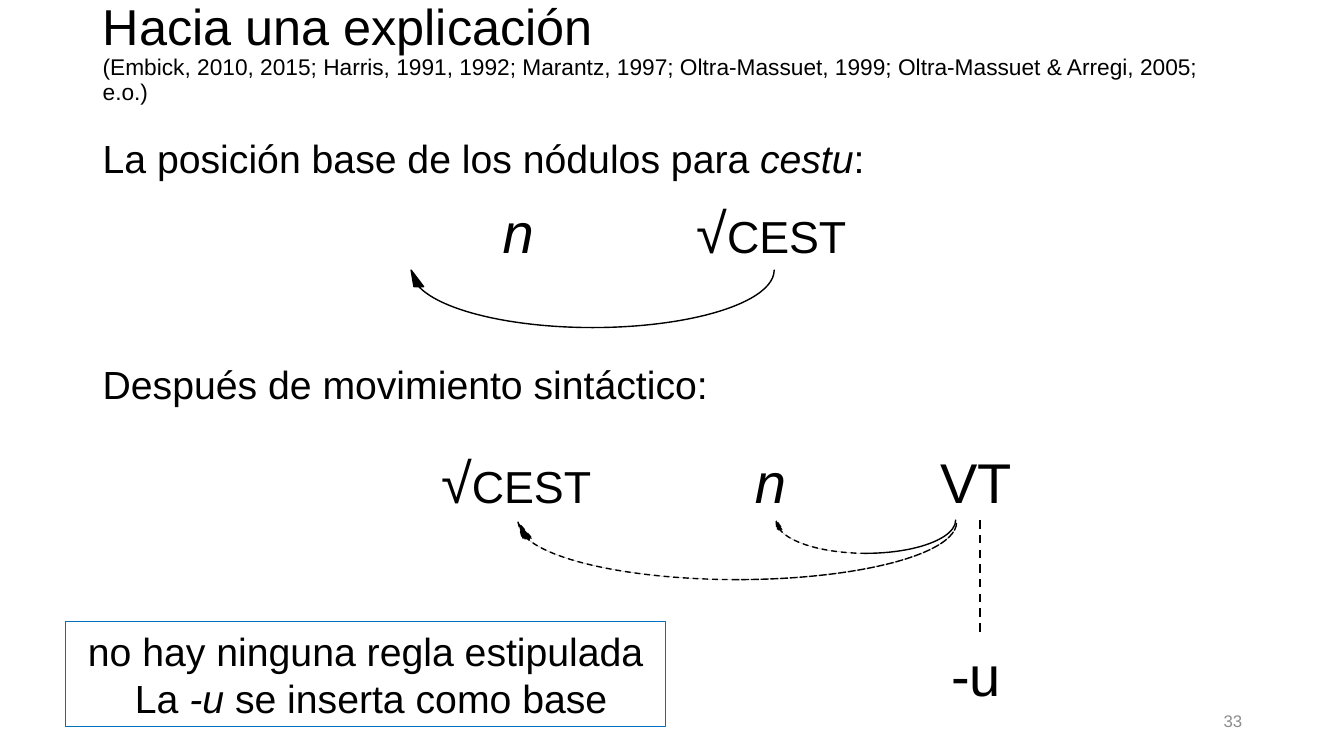
import pptx
import pptx.util
import pptx.dml.color
import pptx.enum.dml
import pptx.enum.shapes
import pptx.enum.text
import lxml.etree

ALIGN = pptx.enum.text.PP_ALIGN
ANCHOR = pptx.enum.text.MSO_ANCHOR
SHAPE = pptx.enum.shapes.MSO_SHAPE
DASH = pptx.enum.dml.MSO_LINE.DASH
BLACK, BLUE, GRAY = "000000", "0070C0", "8C8C8C"


def color(value):
    return pptx.dml.color.RGBColor.from_string(value)


class Page:
    """A blank page whose lengths are percentages of its width and height."""

    font = "Arial"

    def __init__(self, deck):
        self.width, self.height = deck.slide_width, deck.slide_height
        self.shapes = deck.slides.add_slide(deck.slide_layouts[6]).shapes

    def place(self, left, top, width, height):
        return (round(self.width * left / 100), round(self.height * top / 100),
                round(self.width * width / 100), round(self.height * height / 100))

    def span(self, para, text, size, italic=False, small_caps=False, ink=BLACK):
        run = para.add_run()
        run.text = text
        run.font.name = self.font
        run.font.size = pptx.util.Pt(size)
        run.font.italic = italic
        run.font.color.rgb = color(ink)
        if small_caps:
            run.font._element.set("cap", "small")

    def text(self, area, anchor=ANCHOR.TOP, align=ALIGN.LEFT, spacing=1.0):
        """Add a text box and return it with its first paragraph."""
        box = self.shapes.add_textbox(*self.place(*area))
        box.text_frame.word_wrap = True
        box.text_frame.vertical_anchor = anchor
        para = box.text_frame.paragraphs[0]
        para.alignment = align
        para.line_spacing = spacing
        return box, para

    def node(self, left, top, label):
        """Add a centred syntactic node one tenth of the page wide."""
        box, para = self.text((left, top, 10, 10.27), align=ALIGN.CENTER)
        box.text_frame.margin_right = pptx.util.Inches(0.17)
        self.span(para, label, 40, italic=label == "n")
        return box

    def root(self, left, top):
        box, para = self.text((left, top, 21.38, 10.27), align=ALIGN.CENTER)
        box.text_frame.margin_right = pptx.util.Inches(0.21)
        self.span(para, "√", 40)
        self.span(para, "cest", 40, small_caps=True)

    def shape(self, kind, area, fill=None, ink=BLACK, weight=1):
        shape = self.shapes.add_shape(kind, *self.place(*area))
        shape.shadow.inherit = False
        if fill:
            shape.fill.solid()
            shape.fill.fore_color.rgb = color(fill)
        else:
            shape.fill.background()
        shape.line.color.rgb = color(ink)
        shape.line.width = pptx.util.Pt(weight)
        return shape

    def movement(self, area, dashed=False):
        """Add a curved arrow that runs from right to left."""
        arrow = self.shape(SHAPE.CURVED_UP_ARROW, area, fill=BLACK)
        for index, value in enumerate((0, 0.17, 0.288)):
            arrow.adjustments[index] = value
        arrow._element.spPr.xfrm.set("flipH", "1")
        if dashed:
            arrow.line.dash_style = DASH

    def link(self, upper, lower):
        """Join the bottom of one box to the top of another by a dashed line."""
        line = self.shapes.add_connector(
            pptx.enum.shapes.MSO_CONNECTOR.STRAIGHT, 0, 0, 0, 0)
        line.begin_connect(upper, 2)
        line.end_connect(lower, 0)
        line.line.color.rgb = color(BLACK)
        line.line.width = pptx.util.Pt(1.5)
        line.line.dash_style = DASH
        lxml.etree.SubElement(line._element.spPr,
                              pptx.oxml.ns.qn("a:effectLst"))


def main():
    deck = pptx.Presentation()
    deck.slide_width = pptx.util.Inches(13.33)
    deck.slide_height = pptx.util.Inches(7.5)
    page = Page(deck)

    title = page.text((6.9, 2.4, 86.25, 9.33), ANCHOR.MIDDLE, spacing=0.9)[1]
    page.span(title, "Hacia una explicación", 36)
    title.add_line_break()
    page.span(title, "(Embick, 2010, 2015; Harris, 1991, 1992; Marantz, 1997; "
              "Oltra-Massuet, 1999; Oltra-Massuet & Arregi, 2005; e.o.)", 16.2)

    base = page.text((6.9, 17.87, 86.25, 7), spacing=0.9)[1]
    page.span(base, "La posición base de los nódulos para ", 28)
    page.span(base, "cestu", 28, italic=True)
    page.span(base, ":", 28)
    base_row = 25.47
    page.root(47.11, base_row)
    page.node(33.83, base_row, "n")
    page.movement((30.23, 35.73, 27.38, 7.6))

    moved = page.text((6.9, 47.75, 86.25, 7), spacing=0.9)[1]
    page.span(moved, "Después de movimiento sintáctico:", 28)
    moved_row, theme_column = 58.53, 67.89
    page.root(28.13, moved_row)
    page.node(52.59, moved_row, "n")
    theme_vowel = page.node(theme_column, moved_row, "VT")
    ending = page.node(theme_column, 84.13, "-u")
    page.movement((38.18, 69.07, 33, 7.6), dashed=True)
    page.movement((57.53, 68.8, 13.58, 4.4), dashed=True)
    page.link(theme_vowel, ending)

    note = page.shape(SHAPE.RECTANGLE, (4.88, 82.27, 44.64, 13.87),
                      ink=BLUE, weight=0.75)
    frame = note.text_frame
    frame.word_wrap = True
    frame.vertical_anchor = ANCHOR.TOP
    rule, insertion = frame.paragraphs[0], frame.add_paragraph()
    rule.alignment = insertion.alignment = ALIGN.CENTER
    insertion._p.get_or_add_pPr().set("marL", str(pptx.util.Inches(0.11)))
    page.span(rule, "no hay ninguna regla estipulada", 28)
    page.span(insertion, "La ", 28)
    page.span(insertion, "-u", 28, italic=True)
    page.span(insertion, " se inserta como base", 28)

    number = page.text((70.67, 92.67, 22.5, 5.33), ANCHOR.MIDDLE, ALIGN.RIGHT)[1]
    page.span(number, "33", 12, ink=GRAY)

    deck.save("out.pptx")


if __name__ == "__main__":
    main()
